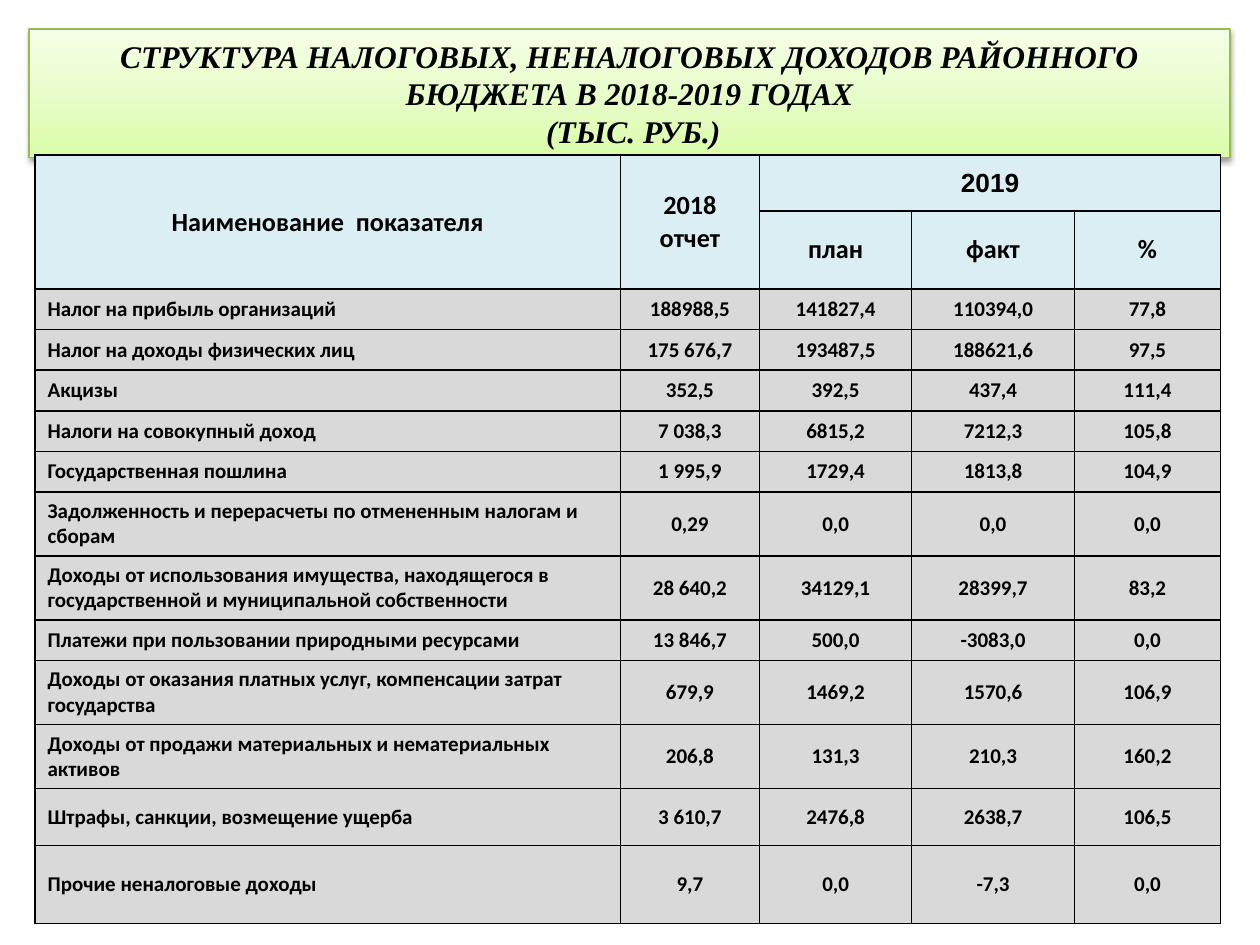
from pptx import Presentation
from pptx.dml.color import RGBColor
from pptx.enum.text import MSO_ANCHOR, MSO_AUTO_SIZE, PP_ALIGN
from pptx.oxml import parse_xml
from pptx.oxml.ns import nsdecls
from pptx.util import Pt

LEFT, CENTER = PP_ALIGN.LEFT, PP_ALIGN.CENTER
MIDDLE = MSO_ANCHOR.MIDDLE
NO_FIT = MSO_AUTO_SIZE.NONE
TITLE_ONLY = 5

TITLE = ("СТРУКТУРА НАЛОГОВЫХ, НЕНАЛОГОВЫХ ДОХОДОВ РАЙОННОГО "
         "БЮДЖЕТА В 2018-2019 ГОДАХ\v (ТЫС. РУБ.)")
TITLE_STOPS = [(0, "DAFDA7"), (35, "E4FCC2"), (100, "F5FFE7")]
HEADER = [
    ["Наименование  показателя", "2018\nотчет", "2019", "", ""],
    ["", "", "план", "факт", "%"],
]
MERGES = [(0, 0, 1, 0), (0, 1, 1, 1), (0, 2, 0, 4)]
INCOME = [
    ["Налог на прибыль организаций", "188988,5", "141827,4", "110394,0", "77,8"],
    ["Налог на доходы физических лиц", "175 676,7", "193487,5", "188621,6", "97,5"],
    ["Акцизы", "352,5", "392,5", "437,4", "111,4"],
    ["Налоги на совокупный доход", "7 038,3", "6815,2", "7212,3", "105,8"],
    ["Государственная пошлина", "1 995,9", "1729,4", "1813,8", "104,9"],
    ["Задолженность и перерасчеты по отмененным налогам и сборам",
     "0,29", "0,0", "0,0", "0,0"],
    ["Доходы от использования имущества, находящегося в государственной "
     "и муниципальной собственности", "28 640,2", "34129,1", "28399,7", "83,2"],
    ["Платежи при пользовании природными ресурсами",
     "13 846,7", "500,0", "-3083,0", "0,0"],
    ["Доходы от оказания платных услуг, компенсации затрат государства",
     "679,9", "1469,2", "1570,6", "106,9"],
    ["Доходы от продажи материальных и нематериальных активов",
     "206,8", "131,3", "210,3", "160,2"],
    ["Штрафы, санкции, возмещение ущерба", "3 610,7", "2476,8", "2638,7", "106,5"],
    ["Прочие неналоговые доходы", "9,7", "0,0", "-7,3", "0,0"],
]
COLS = [334.5, 79.5, 87, 93, 83.5]
ONE_LINE, TWO_LINES = 23.2, 36.6
ROWS = ([32, 44.6] + [ONE_LINE] * 5 + [TWO_LINES] * 2 + [ONE_LINE]
        + [TWO_LINES] * 2 + [32.4, 44.6])


def color(value):
    return RGBColor.from_string(value)


class Deck:
    ink = "000000"
    title_font, body_font, year_font = "Times New Roman", "Calibri", "Arial"
    title_size, header_size, body_size = 18, 15, 12
    header_fill, body_fill = "DBEEF4", "D9D9D9"
    title_line = "98B955"

    def __init__(self, prs):
        self.s = prs.slides.add_slide(prs.slide_layouts[TITLE_ONLY])

    def text(self, tf, text, name, size, align, italic=False):
        tf.text = text
        for p in tf.paragraphs:
            p.alignment = align
            p.font.name = name
            p.font.size = Pt(size)
            p.font.bold = True
            p.font.italic = italic
            p.font.color.rgb = color(self.ink)

    def title(self, text, x, y, w, h):
        sp = self.s.shapes.title
        sp.left, sp.top, sp.width, sp.height = Pt(x), Pt(y), Pt(w), Pt(h)
        stops = "".join(
            f'<a:gs pos="{pos * 1000}"><a:srgbClr val="{rgb}"/></a:gs>'
            for pos, rgb in TITLE_STOPS)
        spPr = sp.element.spPr
        spPr.append(parse_xml(
            f'<a:gradFill {nsdecls("a")} rotWithShape="1"><a:gsLst>{stops}</a:gsLst>'
            '<a:lin ang="16200000" scaled="0"/></a:gradFill>'))
        sp.line.color.rgb = color(self.title_line)
        sp.line.width = Pt(0.75)
        spPr.append(parse_xml(
            f'<a:effectLst {nsdecls("a")}><a:outerShdw blurRad="{Pt(3.1)}" '
            f'dist="{Pt(1.6)}" dir="5400000" rotWithShape="0"><a:srgbClr val="{self.ink}">'
            '<a:alpha val="38000"/></a:srgbClr></a:outerShdw></a:effectLst>'))
        tf = sp.text_frame
        tf.word_wrap = True
        tf.auto_size = NO_FIT
        tf.vertical_anchor = MIDDLE
        self.text(tf, text, self.title_font, self.title_size, CENTER, italic=True)

    def cell(self, cell, text, name, size, align, fill):
        tcPr = cell._tc.get_or_add_tcPr()
        for side in ("lnL", "lnR", "lnT", "lnB"):
            tcPr.append(parse_xml(
                f'<a:{side} {nsdecls("a")} w="{Pt(1)}"><a:solidFill>'
                f'<a:srgbClr val="{self.ink}"/></a:solidFill></a:{side}>'))
        cell.fill.solid()
        cell.fill.fore_color.rgb = color(fill)
        cell.vertical_anchor = MIDDLE
        self.text(cell.text_frame, text, name, size, align)

    def table(self, header, body, x, y):
        data = header + body
        table = self.s.shapes.add_table(
            len(data), len(COLS), Pt(x), Pt(y), Pt(sum(COLS)), Pt(sum(ROWS))).table
        table.first_row = table.horz_banding = False
        for column, width in zip(table.columns, COLS):
            column.width = Pt(width)
        for row, height in zip(table.rows, ROWS):
            row.height = Pt(height)
        for i, values in enumerate(data):
            in_header = i < len(header)
            size = self.header_size if in_header else self.body_size
            fill = self.header_fill if in_header else self.body_fill
            for j, value in enumerate(values):
                align = CENTER if in_header or j else LEFT
                name = self.year_font if value == "2019" else self.body_font
                self.cell(table.cell(i, j), value, name, size, align, fill)
        for top, left, bottom, right in MERGES:
            table.cell(top, left).merge(table.cell(bottom, right))


def main():
    prs = Presentation()
    prs.slide_width, prs.slide_height = Pt(720), Pt(540)
    deck = Deck(prs)
    deck.title(TITLE, 16.6, 16.6, 686.2, 73.4)
    deck.table(HEADER, INCOME, 20, 88.6)
    prs.save("out.pptx")


if __name__ == "__main__":
    main()
